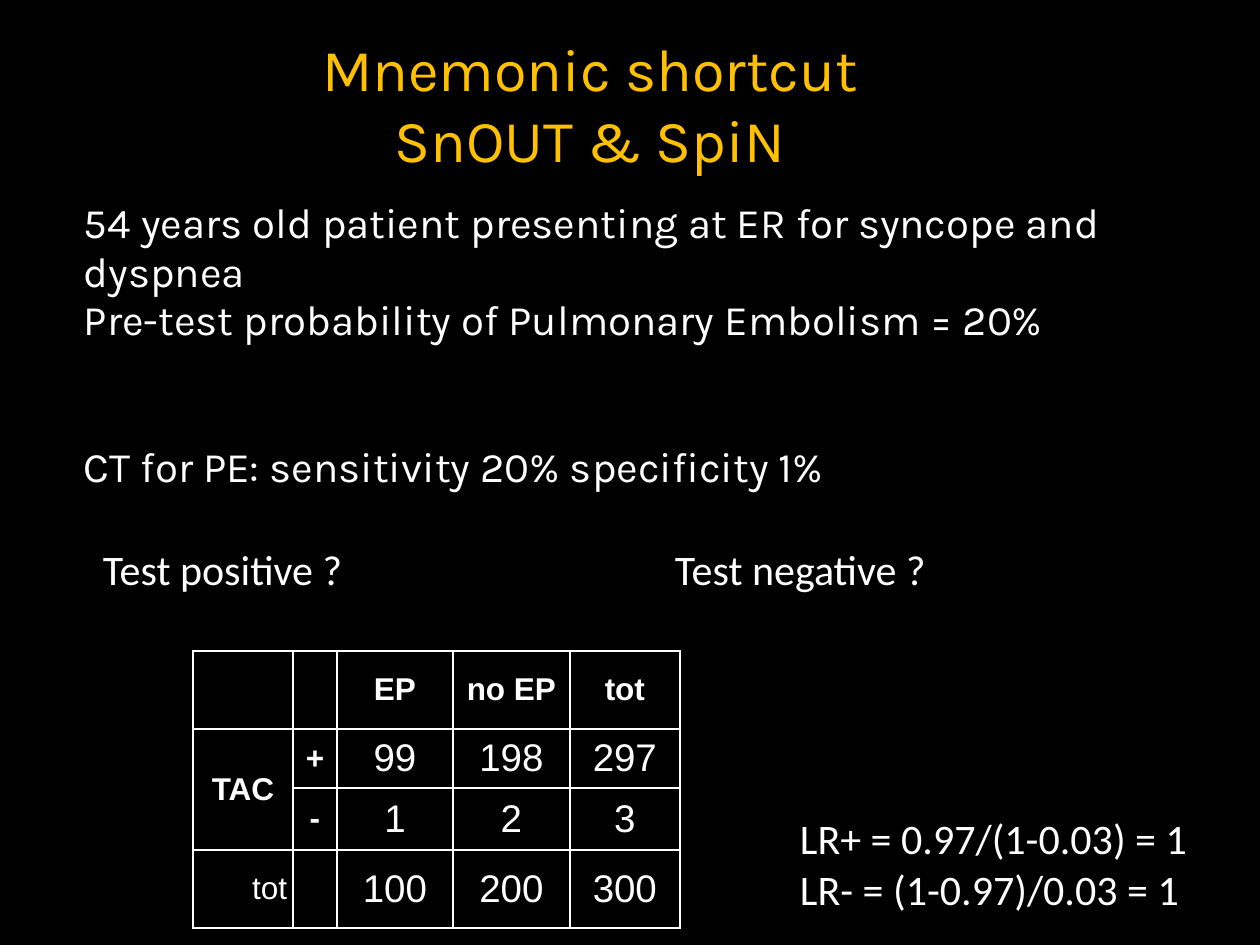
from dataclasses import dataclass

from lxml.etree import SubElement
from pptx import Presentation
from pptx.dml.color import RGBColor
from pptx.enum.text import MSO_ANCHOR, MSO_AUTO_SIZE, PP_ALIGN
from pptx.oxml.ns import qn
from pptx.util import Emu, Pt


@dataclass(frozen=True)
class Theme:
    background: str = "000000"
    accent: str = "FFC000"
    text: str = "FFFFFF"
    heading_font: str = "Karla"
    note_font: str = "Calibri"
    table_font: str = "Arial"
    title_size: int = 34
    body_size: int = 24
    value_size: int = 22
    label_size: int = 18
    border_width: int = 1


THEME = Theme()
INSET = 6
COLUMNS = [100, 44, 116, 117, 110]
ROWS = [78, 59, 62, 78]
CELLS = [
    ["", "", "EP", "no EP", "tot"],
    ["TAC", "+", "99", "198", "297"],
    ["", "-", "1", "2", "3"],
    ["tot", "", "100", "200", "300"],
]


def px(n):
    """Convert slide pixels (126 to the inch) to EMU."""
    return Emu(round(n * 914400 / 126))


def set_insets(target):
    target.margin_left = target.margin_right = px(INSET)
    target.margin_top = target.margin_bottom = px(INSET)


def style_text(tf, font, size, color=THEME.text, align=PP_ALIGN.LEFT, bold=False):
    for p in tf.paragraphs:
        p.alignment = align
        for r in p.runs:
            r.font.name = font
            r.font.size = Pt(size)
            r.font.bold = bold
            r.font.color.rgb = RGBColor.from_string(color)


def set_title(s, text, x, y, w, h):
    sp = s.shapes.title
    sp.left, sp.top, sp.width, sp.height = px(x), px(y), px(w), px(h)
    tf = sp.text_frame
    tf.text = text
    tf.vertical_anchor = MSO_ANCHOR.MIDDLE
    set_insets(tf)
    style_text(tf, THEME.heading_font, THEME.title_size, THEME.accent, PP_ALIGN.CENTER)


def add_text(s, text, x, y, w, h, font=THEME.note_font):
    tf = s.shapes.add_textbox(px(x), px(y), px(w), px(h)).text_frame
    tf.word_wrap = True
    tf.auto_size = MSO_AUTO_SIZE.SHAPE_TO_FIT_TEXT
    set_insets(tf)
    tf.text = text
    style_text(tf, font, THEME.body_size)
    return tf


def add_case(s):
    tf = add_text(
        s,
        "54 years old patient presenting at ER for syncope and\n"
        "dyspnea\n"
        "Pre-test probability of Pulmonary Embolism = 20%\n"
        "CT for PE: sensitivity 20% specificity 1%",
        78, 193, 1038, 310, THEME.heading_font,
    )
    for p in tf.paragraphs:
        p.line_spacing = 0.97
    tf.paragraphs[-1].space_before = Pt(56)


def add_borders(cell, sides):
    tc_pr = cell._tc.get_or_add_tcPr()
    for side in sides:
        ln = SubElement(tc_pr, qn(f"a:ln{side}"), w=str(Pt(THEME.border_width)))
        fill = SubElement(ln, qn("a:solidFill"))
        SubElement(fill, qn("a:srgbClr"), val=THEME.text)


def format_cell(cell, row, col):
    sides = "LRT" if cell.is_merge_origin else "LRB" if cell.is_spanned else "LRTB"
    add_borders(cell, sides)
    cell.fill.background()
    set_insets(cell)
    cell.vertical_anchor = MSO_ANCHOR.MIDDLE
    cell.text = CELLS[row][col]
    is_value = row > 0 and col > 1
    is_total_label = row == len(ROWS) - 1 and col == 0
    style_text(
        cell.text_frame,
        THEME.table_font,
        THEME.value_size if is_value else THEME.label_size,
        align=PP_ALIGN.RIGHT if is_total_label else PP_ALIGN.CENTER,
        bold=not (is_value or is_total_label),
    )


def add_results_table(s, x, y):
    frame = s.shapes.add_table(
        len(ROWS), len(COLUMNS), px(x), px(y), px(sum(COLUMNS)), px(sum(ROWS))
    )
    table = frame.table
    table.first_row = table.horz_banding = False
    for column, width in zip(table.columns, COLUMNS):
        column.width = px(width)
    for row, height in zip(table.rows, ROWS):
        row.height = px(height)
    table.cell(1, 0).merge(table.cell(2, 0))
    for row in range(len(ROWS)):
        for col in range(len(COLUMNS)):
            format_cell(table.cell(row, col), row, col)


def main():
    prs = Presentation()
    prs.slide_width, prs.slide_height = px(1260), px(945)
    s = prs.slides.add_slide(prs.slide_layouts[5])
    s.background.fill.solid()
    s.background.fill.fore_color.rgb = RGBColor.from_string(THEME.background)

    set_title(s, "Mnemonic shortcut\nSnOUT & SpiN", 23, 24, 1134, 158)
    add_case(s)
    add_text(s, "Test positive ?", 97, 538, 417, 62)
    add_text(s, "Test negative ?", 669, 538, 407, 62)
    add_text(s, "LR+ = 0.97/(1-0.03) = 1\nLR- = (1-0.97)/0.03 = 1", 794, 807, 465, 111)
    add_results_table(s, 193, 651)
    prs.save("out.pptx")


if __name__ == "__main__":
    main()
